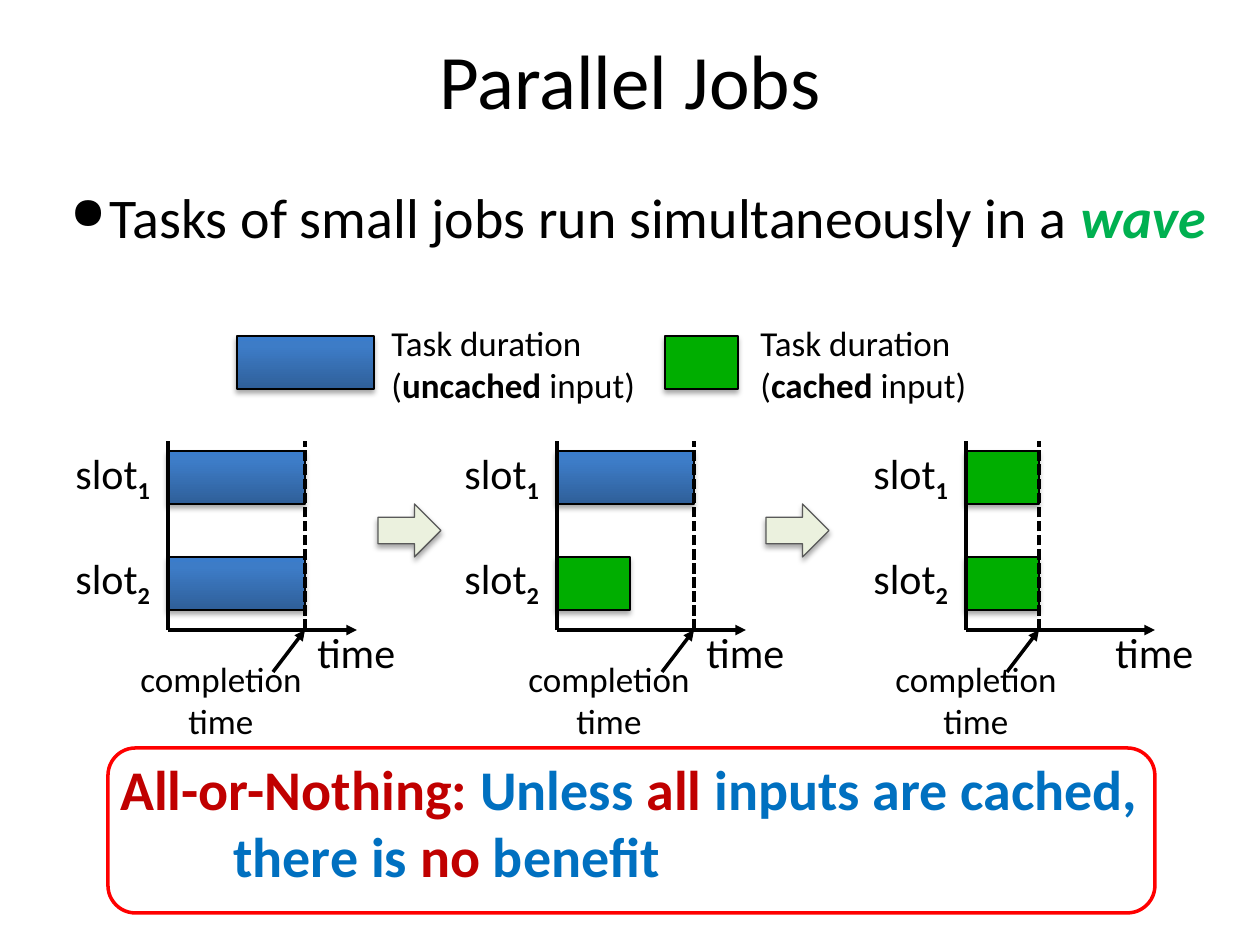
from copy import deepcopy
from lxml import etree
from pptx import Presentation
from pptx.dml.color import RGBColor
from pptx.enum.dml import MSO_LINE
from pptx.enum.shapes import MSO_CONNECTOR, MSO_SHAPE
from pptx.enum.text import MSO_ANCHOR, MSO_AUTO_SIZE, PP_ALIGN
from pptx.oxml.ns import qn
from pptx.util import Pt

PX = 914400 / 126
COLORS = {
    "black": "000000", "wave": "00B050", "cached": "00AE00", "arrow": "EBF1DE",
    "arrow_line": "595959", "red": "C00000", "blue": "0070C0", "frame": "FF0000",
}
UNCACHED = [(0, "2F5F99"), (0.8, "3D7CC7"), (1, "3A7CCB")]
WIDTHS = {"uncached": 137, "cached": 73}
BAR_H = 53


def add_block(shapes, kind, x, y, w, h, fill, border="black"):
    sp = shapes.add_shape(kind, *[int(v * PX) for v in (x, y, w, h)])
    sp.line.color.rgb = RGBColor.from_string(COLORS[border])
    sp.line.width = Pt(0.75)
    spPr = sp._element.spPr
    if fill == "uncached":
        sp.fill.gradient()
        sp.fill.gradient_angle = 90
        stops = spPr.find(".//" + qn("a:gsLst"))
        stops.append(deepcopy(stops[1]))
        for stop, (pos, color) in zip(sp.fill.gradient_stops, UNCACHED):
            stop.position = pos
            stop.color.rgb = RGBColor.from_string(color)
    else:
        sp.fill.solid()
        sp.fill.fore_color.rgb = RGBColor.from_string(COLORS[fill])
    sp.shadow.inherit = False
    shadow = etree.SubElement(spPr.find(qn("a:effectLst")), qn("a:outerShdw"),
                              blurRad=str(Pt(3.1)), dist=str(Pt(1.8)), dir="5400000", rotWithShape="0")
    color = etree.SubElement(shadow, qn("a:srgbClr"), val=COLORS["black"])
    etree.SubElement(color, qn("a:alpha"), val="35000")


def add_text(shapes, x, y, w, h, size, paragraphs, align=PP_ALIGN.LEFT, wrap=False):
    tb = shapes.add_textbox(*[int(v * PX) for v in (x, y, w, h)])
    tf = tb.text_frame
    tf.word_wrap = wrap
    tf.auto_size = MSO_AUTO_SIZE.NONE if wrap else MSO_AUTO_SIZE.SHAPE_TO_FIT_TEXT
    for i, runs in enumerate(paragraphs):
        p = tf.add_paragraph() if i else tf.paragraphs[0]
        p.alignment = align
        for text, color, style in runs:
            r = p.add_run()
            r.text = text
            r.font.name = "Calibri"
            r.font.size = Pt(size)
            r.font.color.rgb = RGBColor.from_string(COLORS[color])
            r.font.bold = "b" in style
            r.font.italic = "i" in style
            if "sub" in style:
                r.font._element.set("baseline", "-25000")
    return tf


prs = Presentation()
prs.slide_width = int(1260 * PX)
prs.slide_height = int(945 * PX)
s = prs.slides.add_slide(prs.slide_layouts[6])

tf = add_text(s.shapes, 63, 0, 1134, 158, 44, [[("Parallel Jobs", "black", "")]], PP_ALIGN.CENTER, True)
tf.vertical_anchor = MSO_ANCHOR.MIDDLE

tf = add_text(s.shapes, 47, 176, 1189, 228, 32, [[
    ("Tasks of small jobs run simultaneously in a ", "black", ""), ("wave", "wave", "bi")]], wrap=True)
p = tf.paragraphs[0]
p.space_before = Pt(6)
pPr = p._p.get_or_add_pPr()
pPr.set("marL", str(int(50 * PX)))
pPr.set("indent", str(int(-39 * PX)))
etree.SubElement(pPr, qn("a:buSzPct"), val="80000")
etree.SubElement(pPr, qn("a:buChar"), char="●")

for x, text_x, text_w, state in [(237, 379, 271, "uncached"), (665, 748, 233, "cached")]:
    add_block(s.shapes, MSO_SHAPE.RECTANGLE, x, 336, WIDTHS[state], BAR_H, state)
    add_text(s.shapes, text_x, 315, text_w, 97, 20, [
        [("Task duration", "black", "")],
        [("(", "black", ""), (state, "black", "b"), (" input)", "black", "")]])

for x in (378, 766):
    add_block(s.shapes, MSO_SHAPE.RIGHT_ARROW, x, 504, 63, BAR_H, "arrow", "arrow_line")

panels = [
    (168, 127, ["uncached", "uncached"]),
    (557, 515, ["uncached", "cached"]),
    (966, 882, ["cached", "cached"]),
]
for x, note_x, states in panels:
    g = s.shapes.add_group_shape().shapes
    for i, state in enumerate(states):
        add_block(g, MSO_SHAPE.RECTANGLE, x, 451 + 106 * i, WIDTHS[state], BAR_H, state)
        add_text(g, x - 105, 441 + 105 * i, 102, 63, 24, [
            [("slot", "black", ""), (str(i + 1), "black", "sub")]])
    add_text(g, x + 137, 620, 105, 63, 24, [[("time", "black", "")]])
    add_text(g, note_x, 651, 188, 97, 20, [
        [("completion", "black", "")], [("time", "black", "")]], PP_ALIGN.CENTER)
    end = x + max(WIDTHS[state] for state in states)
    for x1, y1, x2, y2, look in [
        (x, 630, x, 441, "plain"),
        (x, 630, x + 189, 630, "arrow"),
        (end, 630, end, 441, "dash"),
        (end - 32, 672, end, 630, "arrow"),
    ]:
        ln = g.add_connector(MSO_CONNECTOR.STRAIGHT, *[int(v * PX) for v in (x1, y1, x2, y2)])
        ln.line.color.rgb = RGBColor.from_string(COLORS["black"])
        ln.line.width = Pt(2)
        if look == "dash":
            ln.line.dash_style = MSO_LINE.SQUARE_DOT
        if look == "arrow":
            etree.SubElement(ln.line._get_or_add_ln(), qn("a:tailEnd"), type="triangle")
        etree.SubElement(ln._element.spPr, qn("a:effectLst"))

tf = add_text(s.shapes, 108, 748, 1106, 186, 32, [
    [("All-or-Nothing: ", "red", "b"), ("Unless ", "blue", "b"), ("all", "red", "b"),
     (" inputs are cached,", "blue", "b")],
    [("there is ", "blue", "b"), ("no", "red", "b"), (" benefit", "blue", "b")]], wrap=True)
tf.paragraphs[1]._p.get_or_add_pPr().set("marL", str(int(113 * PX)))

sp = s.shapes.add_shape(MSO_SHAPE.ROUNDED_RECTANGLE, *[int(v * PX) for v in (108, 748, 1047, 165)])
sp.fill.background()
sp.line.color.rgb = RGBColor.from_string(COLORS["frame"])
sp.line.width = Pt(2)
sp.shadow.inherit = False

prs.save("out.pptx")
